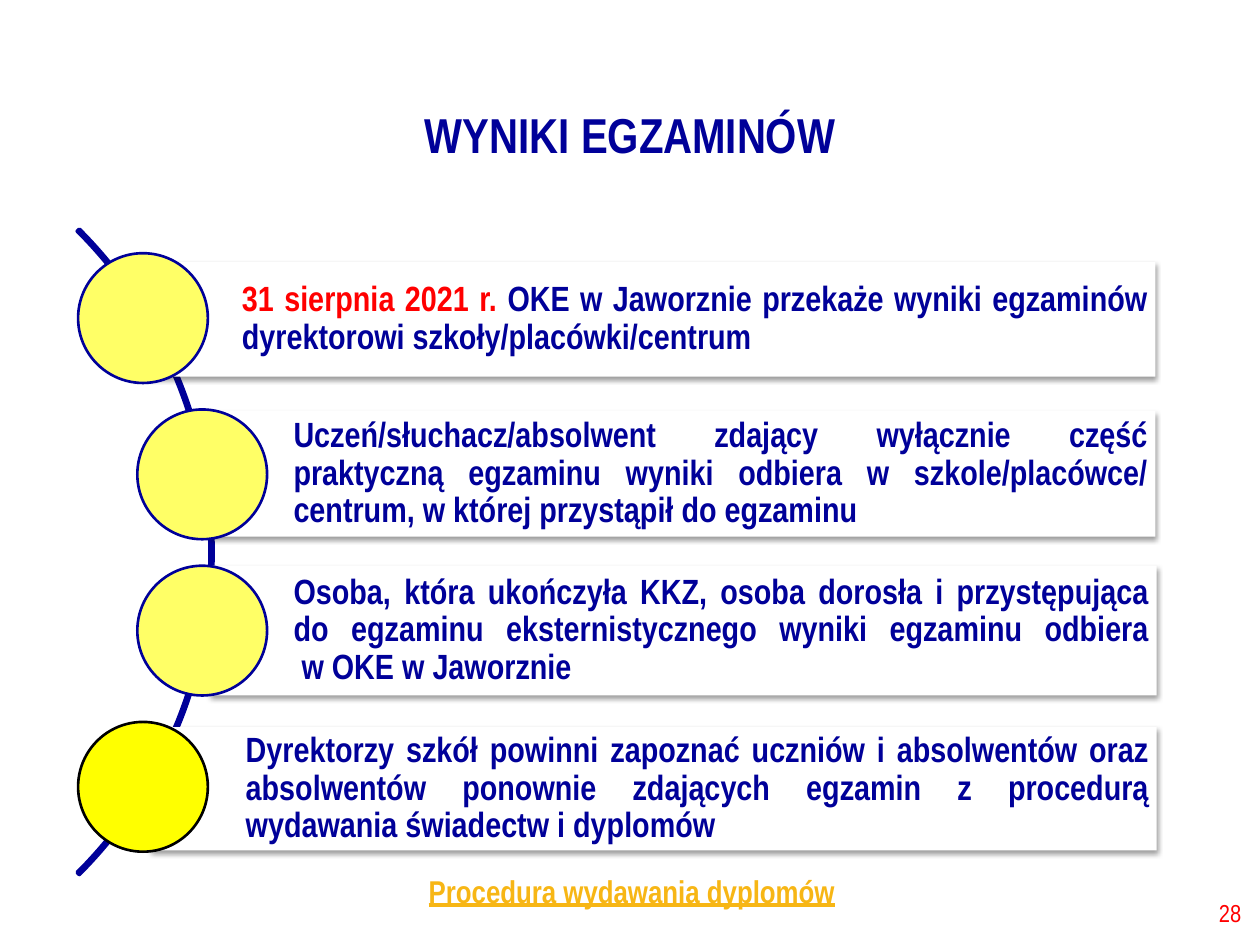
from dataclasses import dataclass

from lxml import etree
from pptx import Presentation
from pptx import util as u
from pptx.dml.color import RGBColor
from pptx.enum import shapes, text
from pptx.oxml import ns

COLORS = {
    "navy": "000099",
    "red": "FF0000",
    "gold": "F7B615",
    "white": "FFFFFF",
    "black": "000000",
    "pale": "FFFF66",
    "yellow": "FFFF00",
    "brown": "7B3D17",
}
FONT = "Arial Narrow"
WIDTH, HEIGHT = u.Inches(10), u.Inches(7.5)
COLUMNS, ROWS = 100, 75
CIRCLE = 10.3
CIRCLE_TOP = 20.1
CIRCLE_PITCH = 12.4
OUTER, INNER = 6.2, 10.9


@dataclass(frozen=True)
class Box:
    column: float
    row: float
    columns: float
    rows: float

    def place(self) -> tuple[int, int, int, int]:
        return (
            round(WIDTH * self.column / COLUMNS),
            round(HEIGHT * self.row / ROWS),
            round(WIDTH * self.columns / COLUMNS),
            round(HEIGHT * self.rows / ROWS),
        )


@dataclass(frozen=True)
class Step:
    box: Box
    circle_column: float
    body: str
    lead: str = ""
    indent: float = 0
    circle_fill: str = "pale"
    circle_line: str = "navy"


@dataclass(frozen=True)
class Label:
    box: Box
    body: str
    size: int
    color: str
    align: text.PP_ALIGN
    anchor: text.MSO_ANCHOR = text.MSO_ANCHOR.MIDDLE
    bold: bool = True
    underline: bool = False


STEPS = [
    Step(
        Box(10.6, 20.8, 81.1, 9.1), OUTER,
        "OKE w Jaworznie przekaże wyniki egzaminów dyrektorowi szkoły/placówki/centrum",
        lead="31 sierpnia 2021 r. ", indent=0.2,
    ),
    Step(
        Box(16.7, 32.6, 75, 10), INNER,
        "Uczeń/słuchacz/absolwent zdający wyłącznie część praktyczną egzaminu "
        "wyniki odbiera w szkole/placówce/ centrum, w której przystąpił do egzaminu",
    ),
    Step(
        Box(16.7, 44.9, 75.1, 10.3), INNER,
        "Osoba, która ukończyła KKZ, osoba dorosła i przystępująca do egzaminu "
        "eksternistycznego wyniki egzaminu odbiera\n w OKE w Jaworznie ",
    ),
    Step(
        Box(12, 57.7, 79.8, 9.8), OUTER,
        "Dyrektorzy szkół powinni zapoznać uczniów i absolwentów oraz absolwentów "
        "ponownie zdających egzamin z procedurą wydawania świadectw i dyplomów ",
        indent=0.09, circle_fill="yellow", circle_line="black",
    ),
]
TITLE = Label(Box(6.9, 6.5, 86.2, 8.2), "WYNIKI EGZAMINÓW", 28, "navy",
              text.PP_ALIGN.CENTER)
FOOTERS = [
    Label(Box(77, 70.4, 22.5, 4), "28", 14, "red", text.PP_ALIGN.RIGHT, bold=False),
    Label(Box(31.8, 68.7, 36.7, 4), "Procedura wydawania dyplomów", 18, "gold",
          text.PP_ALIGN.CENTER, anchor=text.MSO_ANCHOR.TOP, underline=True),
]


def rgb(name: str) -> RGBColor:
    return RGBColor.from_string(COLORS[name])


def style_font(font, size: int, color: str, bold: bool = True) -> None:
    font.name = FONT
    font.size = u.Pt(size)
    font.bold = bold
    font.color.rgb = rgb(color)


def add_outlined(slide, kind, box: Box, fill: str, line: str, width: float):
    shape = slide.shapes.add_shape(kind, *box.place())
    shape.shadow.inherit = False
    shape.fill.solid()
    shape.fill.fore_color.rgb = rgb(fill)
    shape.line.color.rgb = rgb(line)
    shape.line.width = u.Pt(width)
    return shape


def add_shadow(shape) -> None:
    effects = shape._element.spPr.find(ns.qn("a:effectLst"))
    shadow = etree.SubElement(
        effects, ns.qn("a:outerShdw"), blurRad=str(u.Pt(3.1)),
        dist=str(u.Pt(1.6)), dir="5400000", rotWithShape="0",
    )
    color = etree.SubElement(shadow, ns.qn("a:srgbClr"), val=COLORS["black"])
    etree.SubElement(color, ns.qn("a:alpha"), val="38000")


def add_label(slide, label: Label) -> None:
    frame = slide.shapes.add_textbox(*label.box.place()).text_frame
    frame.word_wrap = True
    frame.vertical_anchor = label.anchor
    paragraph = frame.paragraphs[0]
    paragraph.text = label.body
    paragraph.alignment = label.align
    style_font(paragraph.font, label.size, label.color, label.bold)
    if label.underline:
        paragraph.font.underline = True


def add_step(slide, index: int, step: Step) -> None:
    panel = add_outlined(slide, shapes.MSO_SHAPE.RECTANGLE, step.box, "white", "white", 1)
    panel.line.fill.background()
    add_shadow(panel)
    frame = panel.text_frame
    frame.word_wrap = True
    frame.vertical_anchor = text.MSO_ANCHOR.MIDDLE
    frame.margin_left = u.Inches(0.66)
    frame.margin_right = frame.margin_top = frame.margin_bottom = u.Inches(0.06)
    paragraph = frame.paragraphs[0]
    paragraph.alignment = text.PP_ALIGN.JUSTIFY
    paragraph.line_spacing = 0.9
    paragraph._p.get_or_add_pPr().set("marL", str(u.Inches(step.indent)))
    style_font(paragraph.font, 20, "navy")
    if step.lead:
        run = paragraph.add_run()
        run.text = step.lead
        style_font(run.font, 20, "red")
    for position, line in enumerate(step.body.split("\n")):
        if position:
            paragraph.add_line_break()
        run = paragraph.add_run()
        run.text = line
        style_font(run.font, 20, "navy")

    circle = Box(step.circle_column, CIRCLE_TOP + index * CIRCLE_PITCH, CIRCLE, CIRCLE)
    add_outlined(slide, shapes.MSO_SHAPE.OVAL, circle, step.circle_fill,
                 step.circle_line, 1.5)


def main() -> None:
    presentation = Presentation()
    presentation.slide_width, presentation.slide_height = WIDTH, HEIGHT
    slide = presentation.slides.add_slide(presentation.slide_layouts[6])
    add_label(slide, TITLE)
    arc = add_outlined(slide, shapes.MSO_SHAPE.BLOCK_ARC, Box(-55.5, 7.6, 72.4, 72.4),
                       "brown", "navy", 2.25)
    for index, value in enumerate((189, 27, 0.003)):
        arc.adjustments[index] = value
    for index, step in enumerate(STEPS):
        add_step(slide, index, step)
    for label in FOOTERS:
        add_label(slide, label)
    presentation.save("out.pptx")


if __name__ == "__main__":
    main()
